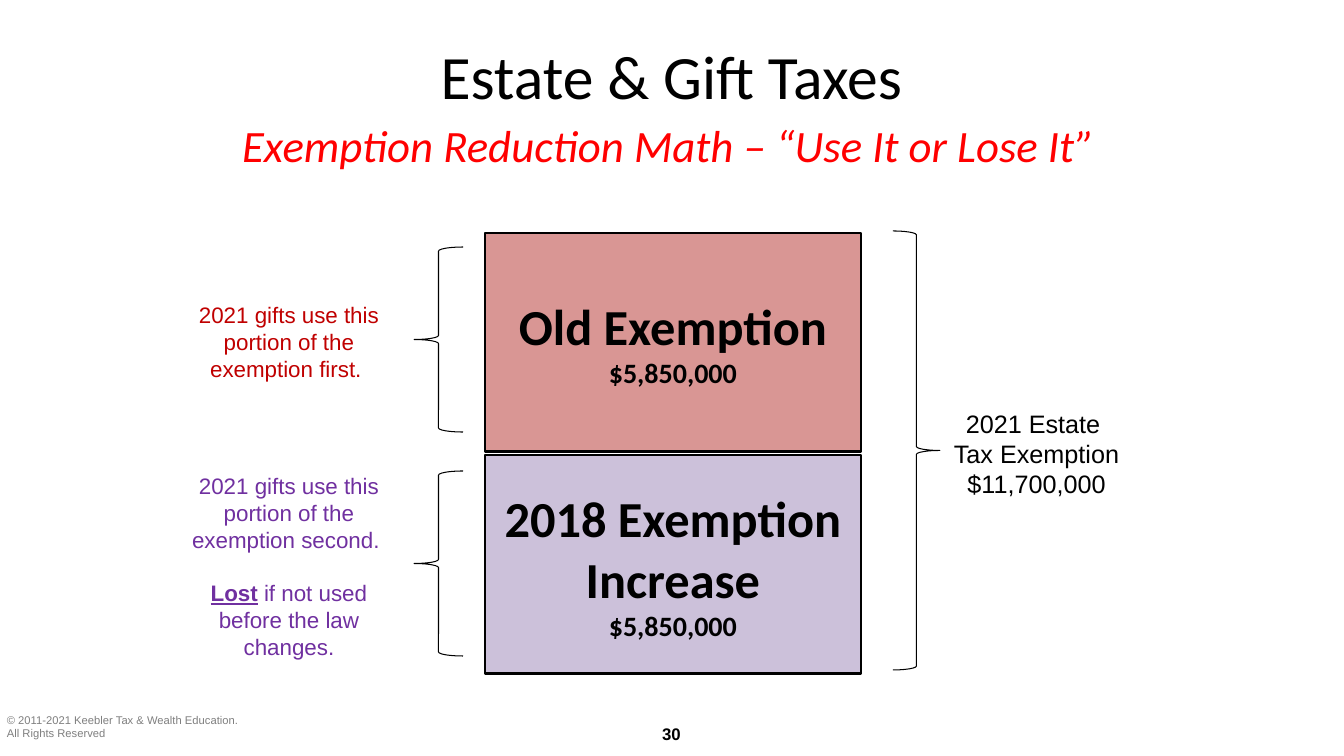
from pptx import Presentation
from pptx.dml.color import RGBColor
from pptx.enum.shapes import MSO_SHAPE as Kind
from pptx.enum.text import MSO_ANCHOR as Anchor, PP_ALIGN as Align
from pptx.util import Emu, Pt

WIDE, HIGH = 1344, 756
BLACK, RED, VIOLET = "000000", "C00000", "7030A0"

BLOCKS = [
    ("Old Exemption", "$5,850,000", "D99694", 233),
    ("2018 Exemption Increase", "$5,850,000", "CCC1DA", 455),
]
BRACES = [
    ((893, 231, 47, 439), 0),
    ((414, 247, 49, 185), 180),
    ((414, 471, 49, 185), 180),
]
HEADS = [
    ((237, 2, 869, 146), "Estate & Gift Taxes", 44, BLACK, False, 1),
    ((194, 75, 950, 146), "Exemption Reduction Math – “Use It or Lose It”", 32, "FF0000", True, 0.9),
]
FIRST = ["2021 gifts use this portion of the exemption first. "]
SECOND = ["2021 gifts use this portion of the exemption second. "]
LOST = [("Lost", True), (" if not used before the law changes.", False)]
TOTAL = ["2021 Estate ", "Tax Exemption", "$11,700,000"]
RIGHTS = ["© 2011-2021 Keebler Tax & Wealth Education.", "All Rights Reserved"]
NUMBER = "30"


def px(n):
    return Emu(round(n * 914400 / 100.8))


def color(code):
    return RGBColor.from_string(code)


def write(para, text, size, tint, face="Arial", bold=False, slant=False, under=False):
    run = para.add_run()
    run.text = text
    font = run.font
    font.name, font.size = face, Pt(size)
    font.bold, font.italic, font.underline = bold, slant, under
    font.color.rgb = color(tint)


def line(frame, first, align=Align.CENTER):
    para = frame.paragraphs[0] if first else frame.add_paragraph()
    para.alignment = align
    return para


def label(slide, box, rows, size, tint, align=Align.CENTER, wrap=True, bold=False):
    frame = slide.shapes.add_textbox(*map(px, box)).text_frame
    frame.word_wrap = wrap
    for i, row in enumerate(rows):
        write(line(frame, i == 0, align), row, size, tint, bold=bold)
    return frame


def shape(slide, kind, box, fill, width):
    item = slide.shapes.add_shape(kind, *map(px, box))
    item.shadow.inherit = False
    if fill:
        item.fill.solid()
        item.fill.fore_color.rgb = color(fill)
    else:
        item.fill.background()
    item.line.color.rgb = color(BLACK)
    item.line.width = Pt(width)
    return item


def main():
    deck = Presentation()
    deck.slide_width, deck.slide_height = px(WIDE), px(HIGH)
    slide = deck.slides.add_slide(deck.slide_layouts[6])

    label(slide, (-3, 708, 257, 37), RIGHTS, 8, "7F7F7F", Align.LEFT, False)
    label(slide, (621, 719, 101, 30), [NUMBER], 12, BLACK, bold=True)

    for name, sum_, fill, top in BLOCKS:
        frame = shape(slide, Kind.RECTANGLE, (485, top, 376, 219), fill, 2).text_frame
        frame.word_wrap = True
        frame.vertical_anchor = Anchor.MIDDLE
        for i, (text, size) in enumerate([(name, 36), (sum_, 20)]):
            write(line(frame, i == 0), text, size, BLACK, "Calibri", True)

    for box, turn in BRACES:
        shape(slide, Kind.RIGHT_BRACE, box, None, 0.75).rotation = turn

    for box, text, size, tint, slant, space in HEADS:
        frame = slide.shapes.add_textbox(*map(px, box)).text_frame
        frame.word_wrap = True
        frame.vertical_anchor = Anchor.MIDDLE
        para = line(frame, True)
        para.line_spacing = space
        write(para, text, size, tint, "Calibri", slant=slant)

    label(slide, (941, 403, 191, 102), TOTAL, 18, BLACK, wrap=False)
    label(slide, (167, 296, 244, 92), FIRST, 16, RED)
    frame = label(slide, (167, 467, 244, 201), SECOND, 16, VIOLET)
    para = line(frame, False)
    para.space_before = Pt(19)
    for text, strong in LOST:
        write(para, text, 16, VIOLET, bold=strong, under=strong)

    deck.save("out.pptx")


if __name__ == "__main__":
    main()
